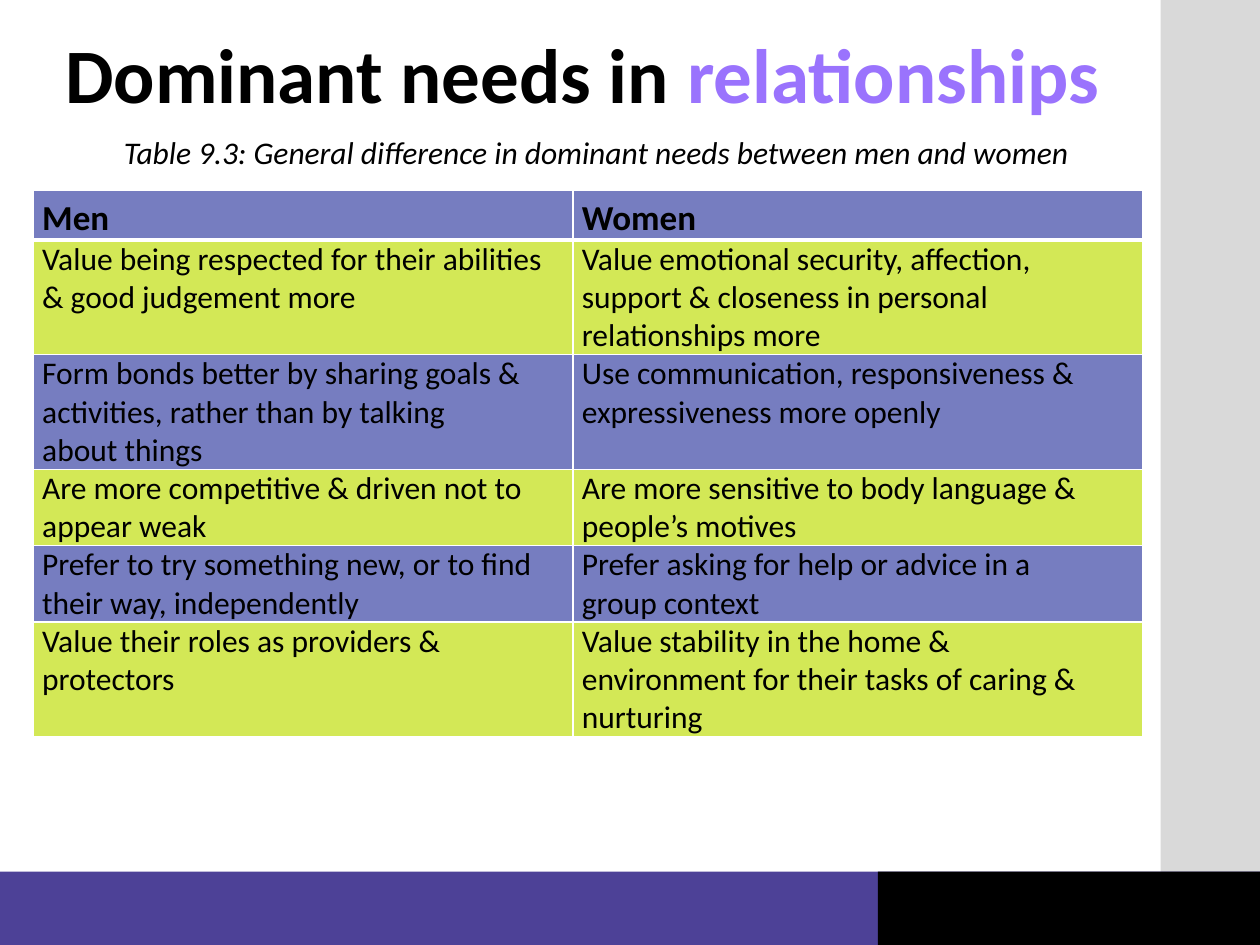
from lxml.etree import SubElement
from pptx import Presentation
from pptx.dml.color import RGBColor
from pptx.enum.shapes import MSO_SHAPE as SHAPE
from pptx.enum.text import MSO_ANCHOR as ANCHOR, PP_ALIGN as ALIGN
from pptx.oxml import parse_xml
from pptx.oxml.ns import nsdecls, qn
from pptx.util import Cm, Pt

BLACK = RGBColor(0x00, 0x00, 0x00)
GREY = RGBColor(0xD9, 0xD9, 0xD9)
PURPLE = RGBColor(0x4D, 0x41, 0x97)
LILAC = RGBColor(0x9A, 0x73, 0xFD)
BLUE = RGBColor(0x76, 0x7D, 0xC0)
LIME = RGBColor(0xD3, 0xE8, 0x56)
FONT = "Calibri"

# Content
TITLE = [("Dominant needs in ", BLACK), ("relationships", LILAC)]
CAPTION = "Table 9.3: General difference in dominant needs between men and women"
HEADER = (["Men"], ["Women"])
NEEDS = [
    (["Value being respected for their abilities", "& good judgement more"],
     ["Value emotional security, affection,", "support & closeness in personal",
      "relationships more"]),
    (["Form bonds better by sharing goals &", "activities, rather than by talking",
      "about things"],
     ["Use communication, responsiveness &", "expressiveness more openly"]),
    (["Are more competitive & driven not to", "appear weak"],
     ["Are more sensitive to body language &", "people’s motives"]),
    (["Prefer to try something new, or to find", "their way, independently"],
     ["Prefer asking for help or advice in a", "group context"]),
    (["Value their roles as providers &", "protectors"],
     ["Value stability in the home &", "environment for their tasks of caring &",
      "nurturing"]),
]
# Left, top, width, height in cm
BANDS = [
    (23.4, 0, 2, 19.05, GREY),
    (0, 17.57, 25.4, 1.48, PURPLE),
    (17.7, 17.57, 7.7, 1.48, BLACK),
]
COLUMNS = (10.88, 11.48)
HEADER_HEIGHT, LINE_HEIGHT = 1, 0.77


def write(tf, paragraphs, size, bold=False, italic=False, align=ALIGN.LEFT, spacing=1.0):
    """Fill a text frame with paragraphs, each a list of (text, colour) runs."""
    for i, runs in enumerate(paragraphs):
        p = tf.add_paragraph() if i else tf.paragraphs[0]
        p.alignment, p.line_spacing = align, spacing
        for text, color in runs:
            r = p.add_run()
            r.text = text
            r.font.name, r.font.size = FONT, Pt(size)
            r.font.bold, r.font.italic = bold, italic
            r.font.color.rgb = color


def add_text(slide, box, paragraphs, size, anchor=ANCHOR.TOP, **fmt):
    tf = slide.shapes.add_textbox(*map(Cm, box)).text_frame
    tf.word_wrap, tf.vertical_anchor = True, anchor
    write(tf, paragraphs, size, **fmt)


def add_borders(cell, bottom):
    """White borders, 1 pt wide except for the bottom one."""
    tcPr = cell._tc.get_or_add_tcPr()
    for i, side in enumerate("LRTB"):
        width = Pt(bottom if side == "B" else 1)
        ln = parse_xml(f'<a:ln{side} {nsdecls("a")} w="{width}"/>')
        fill = SubElement(ln, qn("a:solidFill"))
        SubElement(fill, qn("a:srgbClr"), val="FFFFFF")
        tcPr.insert(i, ln)


def add_needs_table(slide):
    rows = [HEADER] + NEEDS
    heights = [HEADER_HEIGHT] + [LINE_HEIGHT * max(map(len, row)) for row in NEEDS]
    table = slide.shapes.add_table(
        len(rows), len(COLUMNS), Cm(0.67), Cm(3.84),
        Cm(sum(COLUMNS)), Cm(sum(heights))).table
    for column, width in zip(table.columns, COLUMNS):
        column.width = Cm(width)
    for i, (row, height) in enumerate(zip(rows, heights)):
        table.rows[i].height = Cm(height)
        is_header = i == 0
        for j, lines in enumerate(row):
            cell = table.cell(i, j)
            cell.margin_left = cell.margin_right = Cm(0.18)
            cell.margin_top = cell.margin_bottom = 0
            cell.fill.solid()
            cell.fill.fore_color.rgb = LIME if i % 2 else BLUE
            add_borders(cell, bottom=3 if is_header else 1)
            write(cell.text_frame, [[(line, BLACK)] for line in lines],
                  size=20 if is_header else 18, bold=is_header,
                  spacing=1.15 if is_header else 1.0)


def main():
    prs = Presentation()
    prs.slide_width, prs.slide_height = Cm(25.4), Cm(19.05)
    slide = prs.slides.add_slide(prs.slide_layouts[6])

    # Side and bottom bands
    for *box, color in BANDS:
        sp = slide.shapes.add_shape(SHAPE.RECTANGLE, *map(Cm, box))
        sp.shadow.inherit = False
        sp.fill.solid()
        sp.fill.fore_color.rgb = color
        sp.line.fill.background()

    # Title, caption and table
    add_text(slide, (1.07, 0.58, 21.97, 2), [TITLE], 44,
             anchor=ANCHOR.MIDDLE, bold=True, spacing=0.9)
    add_text(slide, (0.66, 2.64, 22.73, 1.19), [[(CAPTION, BLACK)]], 18,
             italic=True, align=ALIGN.CENTER, spacing=0.9)
    add_needs_table(slide)
    prs.save("out.pptx")


if __name__ == "__main__":
    main()
